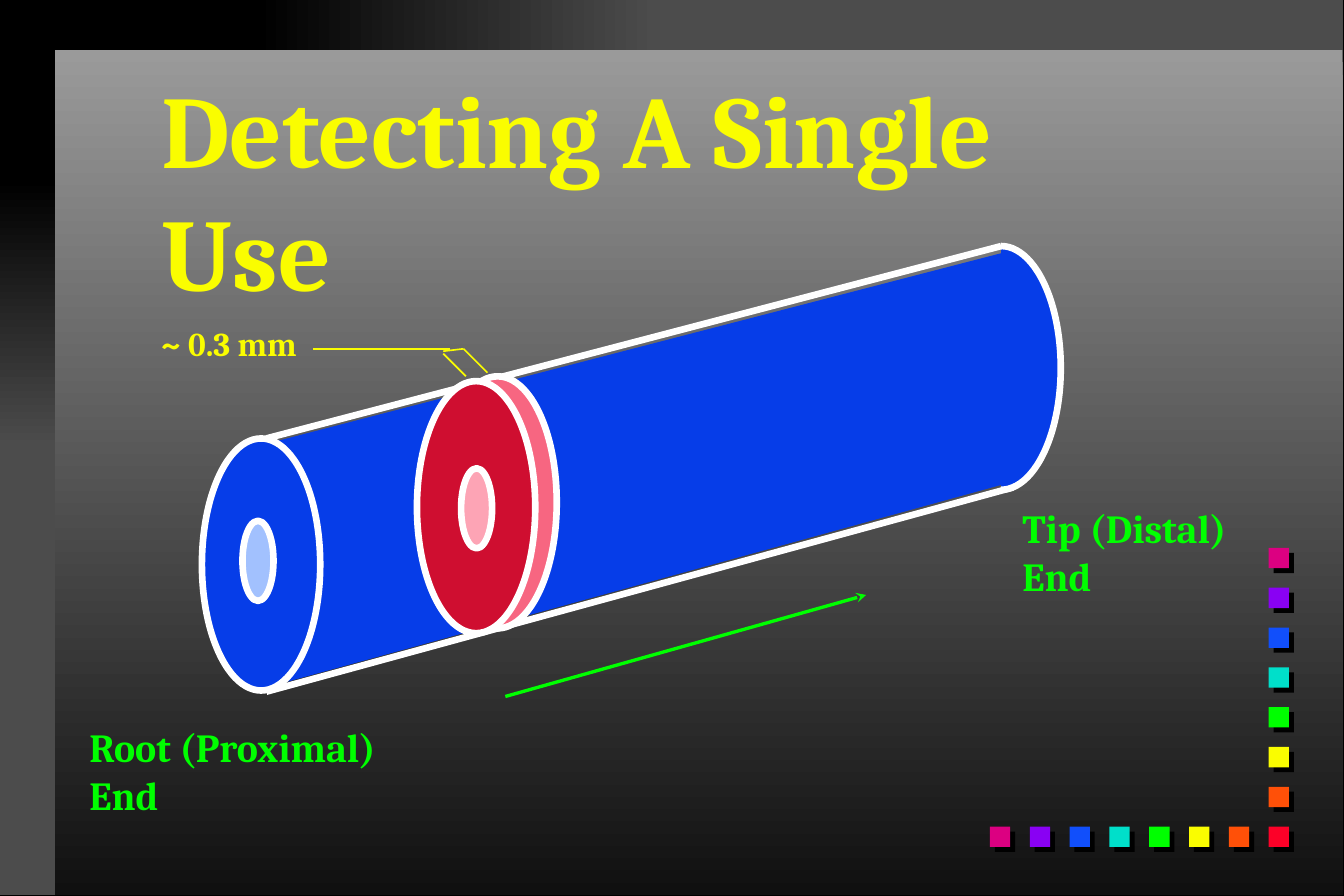
from lxml import etree
from pptx import Presentation
from pptx import util as u
from pptx.dml.color import RGBColor
from pptx.enum import shapes, text
from pptx.oxml import parse_xml
from pptx.oxml.ns import qn

NS = "http://schemas.openxmlformats.org/drawingml/2006/main"
FONT = "Cambria"
WHITE, BLUE, GREEN, YELLOW = "FFFFFF", "063DE8", "00FF00", "FAFD00"
SQUARES = ["FC0128", "FF5008", "FAFD00", "00FF00",
           "00DFCA", "114FFB", "8901F3", "DC0081"]
KIND = shapes.MSO_SHAPE


def paint(target, color):
    target.solid()
    target.fore_color.rgb = RGBColor.from_string(color)


def finish(shape, fill, line=None):
    shape.shadow.inherit = False
    paint(shape.fill, fill)
    if line:
        paint(shape.line.fill, line)
        shape.line.width = u.Pt(4)
    else:
        shape.line.fill.background()
    return shape


def block(slide, kind, box, fill, line=None):
    shape = slide.shapes.add_shape(kind, *map(u.Inches, box))
    return finish(shape, fill, line)


def blend(slide, box, angle, stops):
    shape = block(slide, KIND.RECTANGLE, box, "000000")
    shape.fill.gradient()
    shape.fill.gradient_angle = angle
    for stop, (place, color) in zip(shape.fill.gradient_stops, stops):
        stop.position = place
        stop.color.rgb = RGBColor.from_string(color)


def square(slide, left, top, color):
    shape = block(slide, KIND.RECTANGLE, (left, top, 0.17, 0.17), color)
    effects = shape._element.spPr.find(qn("a:effectLst"))
    effects.append(parse_xml(
        f'<a:outerShdw xmlns:a="{NS}" dist="53340" dir="2700000" '
        'algn="ctr" rotWithShape="0"><a:srgbClr val="000000"/></a:outerShdw>'))


def rule(slide, start, end, color, width, arrow=False):
    line = slide.shapes.add_connector(
        shapes.MSO_CONNECTOR.STRAIGHT, *map(u.Inches, start + end))
    paint(line.line.fill, color)
    line.line.width = u.Pt(width)
    if arrow:
        etree.SubElement(line.line._get_or_add_ln(), qn("a:tailEnd"), type="stealth")
    etree.SubElement(line._element.spPr, qn("a:effectLst"))


def write(shape, box, words, size, color):
    shape.left, shape.top, shape.width, shape.height = map(u.Inches, box)
    frame = shape.text_frame
    frame.word_wrap = True
    frame.auto_size = text.MSO_AUTO_SIZE.NONE
    frame.vertical_anchor = text.MSO_ANCHOR.TOP
    frame.text = words
    for para in frame.paragraphs:
        para.alignment = text.PP_ALIGN.LEFT
        para.font.name = FONT
        para.font.size = u.Pt(size)
        para.font.bold = True
        para.font.color.rgb = RGBColor.from_string(color)


def label(slide, box, words, size, color):
    shape = slide.shapes.add_textbox(*map(u.Inches, box))
    write(shape, box, words, size, color)


def backdrop(slide):
    paint(slide.background.fill, "000000")
    blend(slide, (0, 0, 0.46, 7.49), 270, [(0.2, "000000"), (0.5, "4C4C4C")])
    blend(slide, (0, 0, 11.24, 0.42), 0, [(0.19, "000000"), (0.49, "4C4C4C")])
    blend(slide, (0.46, 0.42, 10.78, 7.07), 270, [(0, "9A9A9A"), (1, "101010")])
    for i, color in enumerate(SQUARES):
        square(slide, 10.62 - i / 3, 6.92, color)
        if i:
            square(slide, 10.62, 6.92 - i / 3, color)


def fiber(slide):
    rule(slide, (2.23, 5.79), (8.48, 4.08), WHITE, 4)
    tip = block(slide, KIND.ARC, (7.88, 2.06, 1, 2.04), BLUE, WHITE)
    tip.adjustments[1] = 54
    rule(slide, (2.23, 3.67), (8.38, 2.06), WHITE, 4)
    pen = slide.shapes.build_freeform(
        u.Inches(2.25), u.Inches(3.71))
    corners = [(2.25, 5.75), (8.38, 4.06), (8.38, 2.12)]
    pen.add_line_segments([tuple(map(u.Inches, spot)) for spot in corners])
    finish(pen.convert_to_shape(), BLUE)
    for left, top, color in [(1.69, 3.67, BLUE), (3.67, 3.15, "F76681"),
                             (3.49, 3.19, "CF0E30")]:
        block(slide, KIND.OVAL, (left, top, 0.99, 2.11), color, WHITE)
    for left, top, color in [(2.03, 4.36, "A2C1FE"), (3.86, 3.92, "FDA4B5")]:
        block(slide, KIND.OVAL, (left, top, 0.26, 0.67), color, WHITE)


def notes(slide):
    rule(slide, (4.23, 5.83), (7.25, 4.98), GREEN, 2, arrow=True)
    for start, end in [((3.9, 3.15), (3.71, 2.96)), ((4.08, 3.12), (3.88, 2.92)),
                       ((3.88, 2.92), (3.71, 2.94)), ((3.77, 2.92), (2.62, 2.92))]:
        rule(slide, start, end, YELLOW, 1)
    label(slide, (0.65, 6, 2.6, 0.9), "Root (Proximal)\nEnd", 24, GREEN)
    label(slide, (8.46, 4.17, 1.97, 0.9), "Tip (Distal)\nEnd", 24, GREEN)
    label(slide, (1.25, 2.66, 1.35, 0.43), "~ 0.3 mm", 20, YELLOW)


def main():
    deck = Presentation()
    deck.slide_width, deck.slide_height = u.Inches(11.25), u.Inches(7.5)
    slide = deck.slides.add_slide(deck.slide_layouts[5])
    backdrop(slide)
    title = slide.shapes.title
    slide.shapes._spTree.append(title._element)
    write(title, (1.25, 0.5, 8.55, 1.13), "Detecting A Single Use", 62, YELLOW)
    fiber(slide)
    notes(slide)
    deck.save("out.pptx")


if __name__ == "__main__":
    main()
